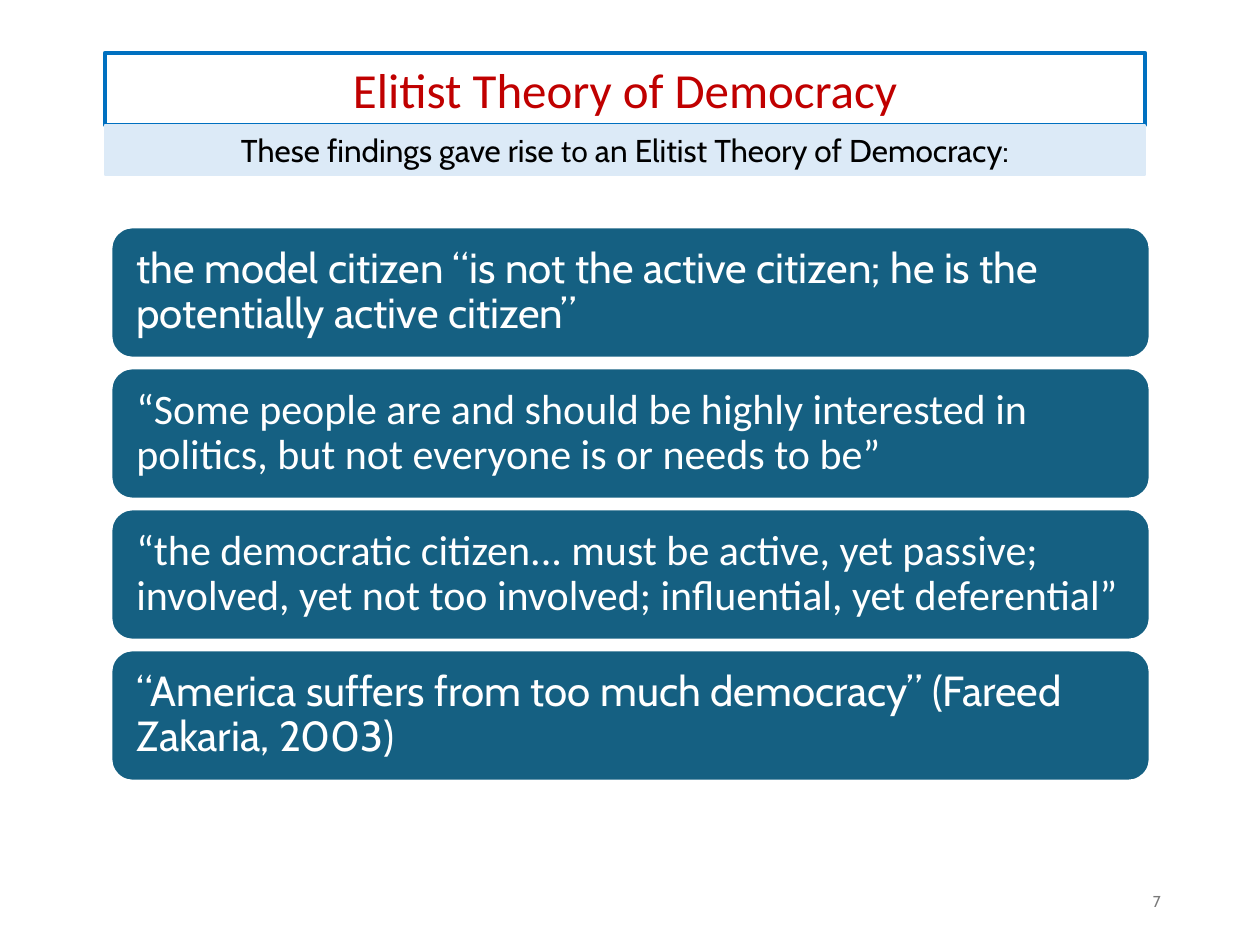
from dataclasses import dataclass

from pptx import Presentation
from pptx.dml.color import RGBColor
from pptx.enum.shapes import MSO_SHAPE
from pptx.enum.text import MSO_ANCHOR, PP_ALIGN
from pptx.util import Emu, Pt

RECT, ROUND = MSO_SHAPE.RECTANGLE, MSO_SHAPE.ROUNDED_RECTANGLE
TOP, MIDDLE = MSO_ANCHOR.TOP, MSO_ANCHOR.MIDDLE
LEFT, CENTER, RIGHT = PP_ALIGN.LEFT, PP_ALIGN.CENTER, PP_ALIGN.RIGHT
SCALE = 914400 / 126


@dataclass(frozen=True)
class Theme:
    white: str = "FFFFFF"
    black: str = "000000"
    blue: str = "0070C0"
    red: str = "C00000"
    teal: str = "156082"
    pale: str = "DCEAF7"
    gray: str = "797979"
    cabin: str = "Cabin"
    plain: str = "Calibri"
    title: int = 28
    quote: int = 24
    lead: int = 18
    page: int = 9


@dataclass(frozen=True)
class Box:
    x: int
    y: int
    w: int
    h: int


@dataclass(frozen=True)
class Style:
    size: int
    color: str
    align: PP_ALIGN
    anchor: MSO_ANCHOR = MIDDLE
    space: float = 1.0


@dataclass(frozen=True)
class Part:
    text: str
    font: str


THEME = Theme()


def px(count: int) -> Emu:
    return Emu(round(count * SCALE))


def place(box: Box) -> list[Emu]:
    return [px(side) for side in (box.x, box.y, box.w, box.h)]


def panel(slide, kind: MSO_SHAPE, box: Box, fill: str, edge: str, width: float):
    shape = slide.shapes.add_shape(kind, *place(box))
    shape.shadow.inherit = False
    shape.fill.solid()
    shape.fill.fore_color.rgb = RGBColor.from_string(fill)
    shape.line.color.rgb = RGBColor.from_string(edge)
    shape.line.width = Pt(width)
    return shape


def write(shape, parts: list[Part], style: Style) -> None:
    frame = shape.text_frame
    frame.word_wrap = True
    frame.vertical_anchor = style.anchor
    para = frame.paragraphs[0]
    para.alignment = style.align
    para.line_spacing = style.space
    for part in parts:
        run = para.add_run()
        run.text = part.text
        run.font.name = part.font
        run.font.size = Pt(style.size)
        run.font.color.rgb = RGBColor.from_string(style.color)


def card(slide, box: Box, quote: Part) -> None:
    shape = panel(slide, ROUND, box, THEME.teal, THEME.white, 1.5)
    frame = shape.text_frame
    frame.margin_left = frame.margin_right = px(19)
    frame.margin_top = frame.margin_bottom = px(19)
    write(shape, [quote], Style(THEME.quote, THEME.white, LEFT, space=0.9))


def main() -> None:
    deck = Presentation()
    deck.slide_width, deck.slide_height = px(1260), px(945)
    slide = deck.slides.add_slide(deck.slide_layouts[6])

    title = panel(slide, RECT, Box(105, 53, 1040, 72), THEME.white, THEME.blue, 2.5)
    write(title, [Part("Elitist Theory of Democracy", THEME.plain)],
          Style(THEME.title, THEME.red, CENTER))

    quotes = [
        Part("the model citizen “is not the active citizen; he is the "
             "potentially active citizen”", THEME.cabin),
        Part("“Some people are and should be highly interested in politics, "
             "but not everyone is or needs to be”", THEME.plain),
        Part("“the democratic citizen... must be active, yet passive; involved, "
             "yet not too involved; influential, yet deferential”", THEME.plain),
        Part("“America suffers from too much democracy” (Fareed Zakaria, 2003)",
             THEME.cabin),
    ]
    for row, quote in enumerate(quotes):
        card(slide, Box(111, 227 + 141 * row, 1039, 131), quote)

    page = slide.shapes.add_textbox(*place(Box(890, 876, 283, 50)))
    write(page, [Part("7", THEME.cabin)], Style(THEME.page, THEME.gray, RIGHT))

    lead = panel(slide, RECT, Box(105, 125, 1040, 50), THEME.pale, THEME.pale, 0.75)
    write(lead, [Part("These findings gave rise ", THEME.cabin),
                 Part("to", THEME.plain),
                 Part(" an Elitist Theory of Democracy:", THEME.cabin)],
          Style(THEME.lead, THEME.black, CENTER, TOP))

    deck.save("out.pptx")


if __name__ == "__main__":
    main()
